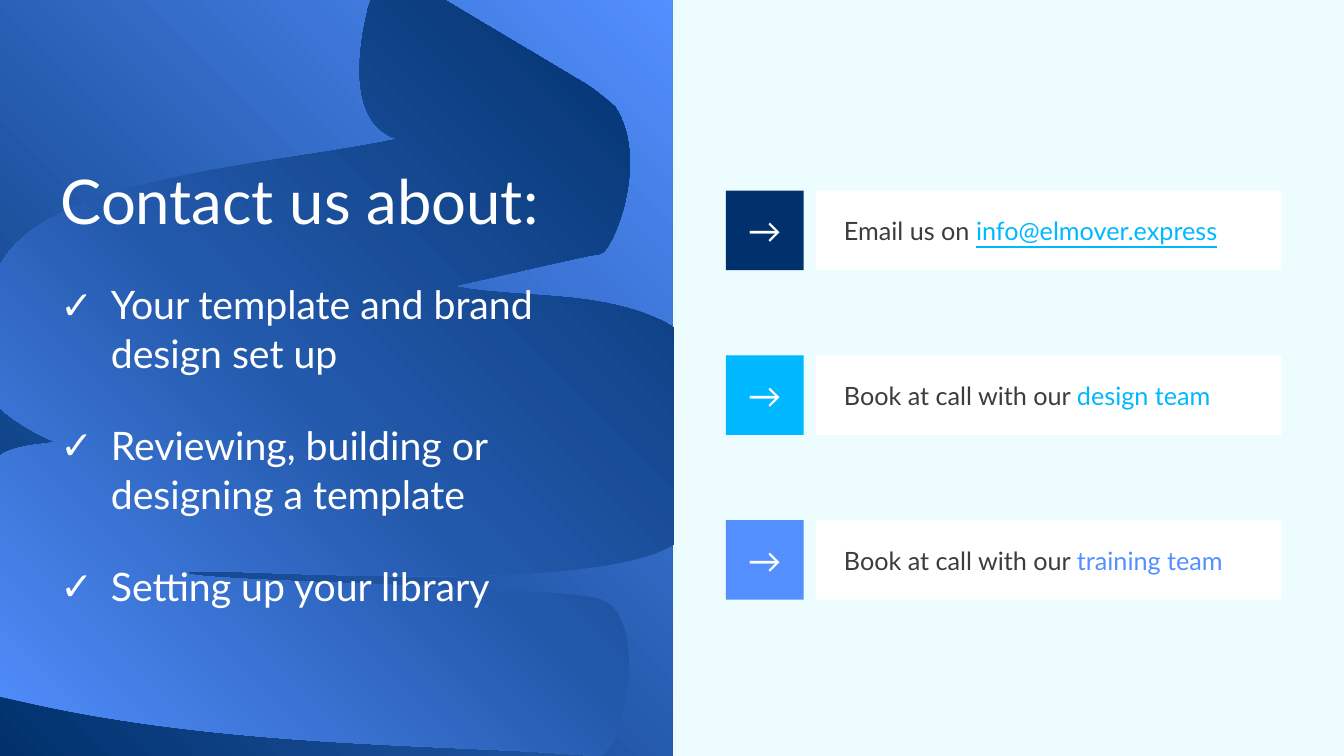
from copy import deepcopy
from dataclasses import dataclass

from lxml.etree import SubElement
from pptx import Presentation
from pptx.dml.color import RGBColor as RGB
from pptx.enum.shapes import MSO_SHAPE as Shape
from pptx.enum.text import MSO_ANCHOR as Anchor, MSO_AUTO_SIZE as Auto, PP_ALIGN as Align
from pptx.oxml.ns import qn
from pptx.util import Inches, Pt


@dataclass(frozen=True)
class Theme:
    """Colours, font and type sizes of the slide."""
    font: str = "Lato"
    navy: str = "00316C"
    cyan: str = "00B8FF"
    blue: str = "538FFF"
    pale: str = "EDFCFF"
    white: str = "FFFFFF"
    ink: str = "3C3C3C"
    head: int = 44
    list: int = 28
    icon: int = 24
    body: int = 18


THEME = Theme()
BASE = [(0, THEME.navy), (0.3, "174B94"), (1, THEME.blue)]
SWIRL = [(0, THEME.blue), (0.47, "2359AB"), (1, THEME.navy)]
START = (3.68, 0)
CURVE = [
    (4.41, 0), (5.82, 0.84),
    (5.92, 0.91, 5.95, 0.93, 6.1, 1.06),
    (6.45, 1.59, 6.08, 2.5, 5.95, 2.52),
    (5.83, 2.53, 5, 2.73, 4.49, 2.84),
    (5.18, 2.97, 5.94, 2.87, 6.6, 3.2),
    (6.68, 3.25), (6.68, 5.4), (6.59, 5.45),
    (5.51, 5.93, 1.97, 5.6, 1.86, 5.68),
    (1.75, 5.77, 5.39, 5.81, 5.93, 5.94),
    (6.48, 6.08, 6.17, 7.58, 5.9, 7.5),
    (4.56, 7.38, 2.32, 7.43, 0.27, 6.97),
    (0, 6.91), (0, 4.52), (0.05, 4.49),
    (0.24, 4.4, 0.49, 4.41, 0.55, 4.38),
    (0.54, 4.39, 0.21, 4.24, 0.01, 4.06),
    (0, 4.04), (0, 2.63), (0.02, 2.6),
    (0.5, 1.75, 2.71, 1.64, 3.94, 1.38),
    (3.47, 1.23, 3.53, 0.55, 3.66, 0.05),
]
TOPICS = [
    "Your template and brand design set up",
    "Reviewing, building or designing a template",
    "Setting up your library",
]
LINKS = [
    (THEME.navy, "Email us on ", "info@elmover.express", THEME.cyan, True),
    (THEME.cyan, "Book at call with our ", "design team", THEME.cyan, None),
    (THEME.blue, "Book at call with our ", "training team", THEME.blue, None),
]


def add_run(para, text, size, color, under=None):
    """Add one styled run to a paragraph."""
    run = para.add_run()
    run.text = text
    font = run.font
    font.name, font.size, font.underline = THEME.font, Pt(size), under
    font.color.rgb = RGB.from_string(color)


def add_box(slide, box, color):
    """Add a plain filled rectangle."""
    rect = slide.shapes.add_shape(Shape.RECTANGLE, *map(Inches, box))
    rect.shadow.inherit = False
    rect.line.fill.background()
    rect.fill.solid()
    rect.fill.fore_color.rgb = RGB.from_string(color)
    return rect


def set_blend(shape, stops):
    """Fill a shape with a three-stop gradient rising to the right."""
    shape.fill.gradient()
    shape.fill.gradient_angle = 45
    group = shape.fill._xPr.find(".//" + qn("a:gsLst"))
    group.append(deepcopy(group[0]))
    for stop, (place, color) in zip(shape.fill.gradient_stops, stops):
        stop.position = place
        stop.color.rgb = RGB.from_string(color)


def bend(shape, parts):
    """Turn the straight segments that have control points into curves."""
    lines = list(shape._element.iter(qn("a:lnTo")))
    for line, part in zip(lines, parts):
        if len(part) == 6:
            line.tag = qn("a:cubicBezTo")
            for index in (0, 2):
                knot = deepcopy(line[-1])
                knot.set("x", str(Inches(part[index])))
                knot.set("y", str(Inches(part[index + 1])))
                line.insert(index // 2, knot)


def add_art(slide, box):
    """Draw the blended panel and its swirl inside the box."""
    set_blend(add_box(slide, box, THEME.navy), BASE)
    pen = slide.shapes.build_freeform(*map(Inches, START), scale=1.0)
    pen.add_line_segments([tuple(map(Inches, part[-2:])) for part in CURVE], close=True)
    swirl = pen.convert_to_shape()
    swirl.left, swirl.top = map(Inches, box[:2])
    swirl.shadow.inherit = False
    swirl.line.fill.background()
    bend(swirl, CURVE)
    set_blend(swirl, SWIRL)


def set_holder(slide, holder, box):
    """Place a placeholder in front and clear its margins."""
    slide.shapes._spTree.append(holder._element)
    holder.left, holder.top, holder.width, holder.height = map(Inches, box)
    frame = holder.text_frame
    frame.margin_left = frame.margin_right = frame.margin_top = frame.margin_bottom = 0
    frame.word_wrap, frame.auto_size = True, Auto.NONE
    frame.vertical_anchor = Anchor.MIDDLE
    return frame


def add_topics(slide, box):
    """Fill the box with the heading and its ticked list."""
    left, top, width, height = box
    drop = 1.18
    head = set_holder(slide, slide.shapes.title, (left, top, width, 0.78)).paragraphs[0]
    head.alignment, head.line_spacing = Align.LEFT, 1.05
    add_run(head, "Contact us about:", THEME.head, THEME.white)
    frame = set_holder(slide, slide.placeholders[1], (left, top + drop, width, height - drop))
    for index, topic in enumerate(TOPICS):
        para = frame.add_paragraph() if index else frame.paragraphs[0]
        para.alignment, para.line_spacing = Align.LEFT, 1.05
        para.space_before = Pt(18 if index else 0)
        para.space_after = Pt(12 if index < len(TOPICS) - 1 else 0)
        add_run(para, topic, THEME.list, THEME.white)
        props = para._p.get_or_add_pPr()
        props.set("marL", str(Inches(0.5)))
        props.set("indent", str(Inches(-0.5)))
        SubElement(props, qn("a:buFont")).set("typeface", THEME.font)
        SubElement(props, qn("a:buChar")).set("char", "✓")


def add_label(rect, align, inset):
    """Prepare a rectangle for one line of text."""
    frame = rect.text_frame
    frame.word_wrap, frame.vertical_anchor = True, Anchor.MIDDLE
    frame.margin_left = Inches(inset)
    frame.margin_right = frame.margin_top = frame.margin_bottom = Inches(0.08)
    frame.paragraphs[0].alignment = align
    return frame.paragraphs[0]


def add_links(slide, box):
    """Spread the contact rows evenly down the box."""
    left, top, width, height = box
    tall, icon, inset = 0.79, 0.77, 0.89
    step = (height - tall) / (len(LINKS) - 1)
    for index, (color, lead, name, tint, under) in enumerate(LINKS):
        y = top + index * step
        tile = add_box(slide, (left, y, icon, tall), color)
        add_run(add_label(tile, Align.CENTER, 0.08), "→", THEME.icon, THEME.white)
        card = add_box(slide, (left + inset, y, width - inset, tall), THEME.white)
        para = add_label(card, Align.LEFT, 0.28)
        add_run(para, lead, THEME.body, THEME.ink)
        add_run(para, name, THEME.body, tint, under)


def main():
    """Build and save the contact slide."""
    deck = Presentation()
    deck.slide_width, deck.slide_height = Inches(13.33), Inches(7.5)
    slide = deck.slides.add_slide(deck.slide_layouts[1])
    add_box(slide, (6.67, 0, 6.66, 7.5), THEME.pale)
    add_art(slide, (0, 0, 6.67, 7.5))
    add_topics(slide, (0.6, 1.57, 5.04, 4.48))
    add_links(slide, (7.2, 1.89, 5.51, 4.06))
    deck.save("out.pptx")


if __name__ == "__main__":
    main()
